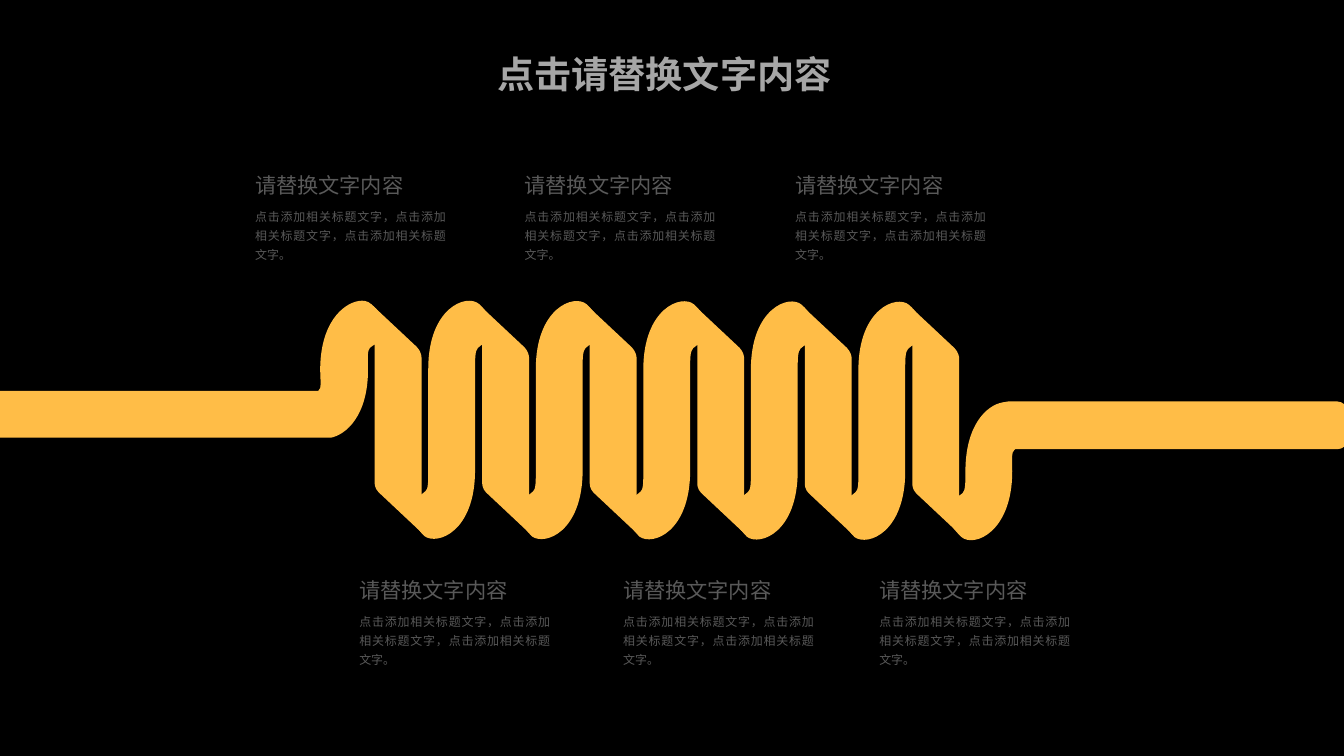
"""Build a slide with a coiled rope between two rows of captions."""
from dataclasses import dataclass
from typing import NamedTuple

from lxml import etree
from pptx import Presentation
from pptx.dml.color import RGBColor
from pptx.enum.text import MSO_AUTO_SIZE, PP_ALIGN
from pptx.oxml.ns import qn
from pptx.util import Inches, Pt

GROW = MSO_AUTO_SIZE.SHAPE_TO_FIT_TEXT
LEFT, CENTER, JUSTIFY = PP_ALIGN.LEFT, PP_ALIGN.CENTER, PP_ALIGN.JUSTIFY


@dataclass(frozen=True)
class Theme:
    background: RGBColor = RGBColor(0x00, 0x00, 0x00)
    rope: RGBColor = RGBColor(0xFF, 0xBD, 0x47)
    title: RGBColor = RGBColor(0xA6, 0xA6, 0xA6)
    caption: RGBColor = RGBColor(0x59, 0x59, 0x59)
    title_size: int = 28
    heading_size: int = 16
    body_size: int = 9


class Style(NamedTuple):
    font: str
    size: int
    color: RGBColor
    align: PP_ALIGN = LEFT
    spacing: float = 1.0
    bold: bool = False


class Caption(NamedTuple):
    x: float
    y: float


class Outline(NamedTuple):
    start: tuple
    segments: tuple


THEME = Theme()
TITLE = Style("Arial", THEME.title_size, THEME.title, CENTER, 1.5, True)
HEADING = Style("Calibri", THEME.heading_size, THEME.caption)
BODY = Style("Arial", THEME.body_size, THEME.caption, JUSTIFY, 1.3)

TITLE_TEXT = "点击请替换文字内容"
HEADING_TEXT = "请替换文字内容"
BODY_TEXT = "点击添加相关标题文字，点击添加相关标题文字，点击添加相关标题文字。"

TOP_Y, BOTTOM_Y = 1.75, 5.99
CAPTIONS = [Caption(x, TOP_Y) for x in (2.57, 5.39, 8.22)]
CAPTIONS += [Caption(x, BOTTOM_Y) for x in (3.66, 6.42, 9.1)]

TURNS = 6
PITCH = 4.5 / 4
DRIFT = 0.01 / 4

LEFT_END = Outline((3.75, 3.15), (
    (3.8, 3.14, 3.85, 3.15, 3.88, 3.18),
    (3.97, 3.25, 4.11, 3.44, 4.08, 3.53),
    (4.06, 3.6, 3.97, 3.55, 3.87, 3.64),
    (3.84, 3.67, 3.85, 3.75, 3.85, 3.87),
    (3.85, 4.35, 3.62, 4.55, 3.46, 4.58),
    (-0.04, 4.58),
    (-0.04, 4.09),
    (3.33, 4.09),
    (3.35, 4.06),
    (3.36, 4.02, 3.35, 3.95, 3.35, 3.87),
    (3.35, 3.39, 3.58, 3.18, 3.75, 3.15),
))
RIGHT_END = Outline((10.55, 4.2), (
    (13.99, 4.2),
    (14.05, 4.2, 14.11, 4.26, 14.11, 4.32),
    (14.11, 4.58),
    (14.11, 4.65, 14.05, 4.7, 13.99, 4.7),
    (10.62, 4.7),
    (10.61, 4.71),
    (10.58, 4.73, 10.59, 4.81, 10.59, 4.93),
    (10.59, 5.57, 10.19, 5.73, 10.06, 5.62),
    (9.98, 5.55, 9.84, 5.36, 9.87, 5.26),
    (9.89, 5.2, 9.98, 5.24, 10.07, 5.16),
    (10.1, 5.13, 10.1, 5.05, 10.1, 4.93),
    (10.1, 4.45, 10.32, 4.24, 10.49, 4.21),
    (10.51, 4.21, 10.53, 4.2, 10.55, 4.2),
))
FRONT_BAND = Outline((4.41, 5.52), (
    (4.41, 3.74),
    (4.41, 3.72, 4.4, 3.67, 4.36, 3.63),
    (3.88, 3.18),
    (3.89, 3.18, 3.92, 3.22, 3.92, 3.27),
    (3.92, 5.05),
    (3.92, 5.06, 3.92, 5.11, 3.96, 5.15),
    (4.45, 5.61),
    (4.44, 5.6, 4.41, 5.57, 4.41, 5.52),
))
BACK_LOOP = Outline((4.97, 4.92), (
    (4.97, 3.87),
    (4.97, 3.75, 4.97, 3.67, 5, 3.64),
    (5.09, 3.55, 5.18, 3.6, 5.2, 3.53),
    (5.23, 3.44, 5.09, 3.25, 5.01, 3.18),
    (4.88, 3.07, 4.48, 3.22, 4.48, 3.86),
    (4.48, 4.92),
    (4.48, 5.04, 4.48, 5.12, 4.45, 5.14),
    (4.36, 5.23, 4.27, 5.19, 4.25, 5.25),
    (4.22, 5.34, 4.36, 5.53, 4.44, 5.61),
    (4.58, 5.71, 4.97, 5.56, 4.97, 4.92),
))


def bend(sp, segments: list) -> None:
    """Turn the lines of a freeform into curves where a segment has control points."""
    lines = list(sp._element.iter(qn("a:lnTo")))
    for line, segment in zip(lines, segments):
        if len(segment) == 1:
            continue
        line.tag = qn("a:cubicBezTo")
        for i, (x, y) in enumerate(segment[:-1]):
            line.insert(i, etree.Element(qn("a:pt"), x=str(x - sp.left), y=str(y - sp.top)))


def add_rope(s, outline: Outline, turn: int = 0) -> None:
    """Draw one piece of rope, moved along to its turn of the coil."""
    start, *segments = [
        [(Inches(x + turn * PITCH), Inches(y + turn * DRIFT))
         for x, y in zip(numbers[::2], numbers[1::2])]
        for numbers in (outline.start, *outline.segments)
    ]
    builder = s.shapes.build_freeform(*start[0])
    builder.add_line_segments([segment[-1] for segment in segments], close=True)
    sp = builder.convert_to_shape()
    bend(sp, segments)
    sp.shadow.inherit = False
    sp.fill.solid()
    sp.fill.fore_color.rgb = THEME.rope
    sp.line.fill.background()


def add_text(s, x: float, y: float, w: float, h: float, text: str, style: Style) -> None:
    """Add a one-paragraph text box in the given style."""
    tf = s.shapes.add_textbox(Inches(x), Inches(y), Inches(w), Inches(h)).text_frame
    tf.word_wrap = True
    tf.auto_size = GROW
    p = tf.paragraphs[0]
    p.text = text
    p.alignment = style.align
    p.line_spacing = style.spacing
    p.font.name = style.font
    p.font.size = Pt(style.size)
    p.font.bold = style.bold
    p.font.color.rgb = style.color


def main() -> None:
    """Build and save the slide."""
    prs = Presentation()
    prs.slide_width, prs.slide_height = Inches(14.06), Inches(7.91)
    s = prs.slides.add_slide(prs.slide_layouts[6])
    s.background.fill.solid()
    s.background.fill.fore_color.rgb = THEME.background

    add_rope(s, RIGHT_END)
    for turn in reversed(range(TURNS)):
        if turn < TURNS - 1:
            add_rope(s, BACK_LOOP, turn)
        add_rope(s, FRONT_BAND, turn)
    add_rope(s, LEFT_END)

    for caption in CAPTIONS:
        add_text(s, caption.x, caption.y, 2.04, 0.37, HEADING_TEXT, HEADING)
        add_text(s, caption.x, caption.y + 0.35, 2.19, 0.69, BODY_TEXT, BODY)
    add_text(s, 4.18, 0.25, 5.54, 0.72, TITLE_TEXT, TITLE)
    prs.save("out.pptx")


if __name__ == "__main__":
    main()
